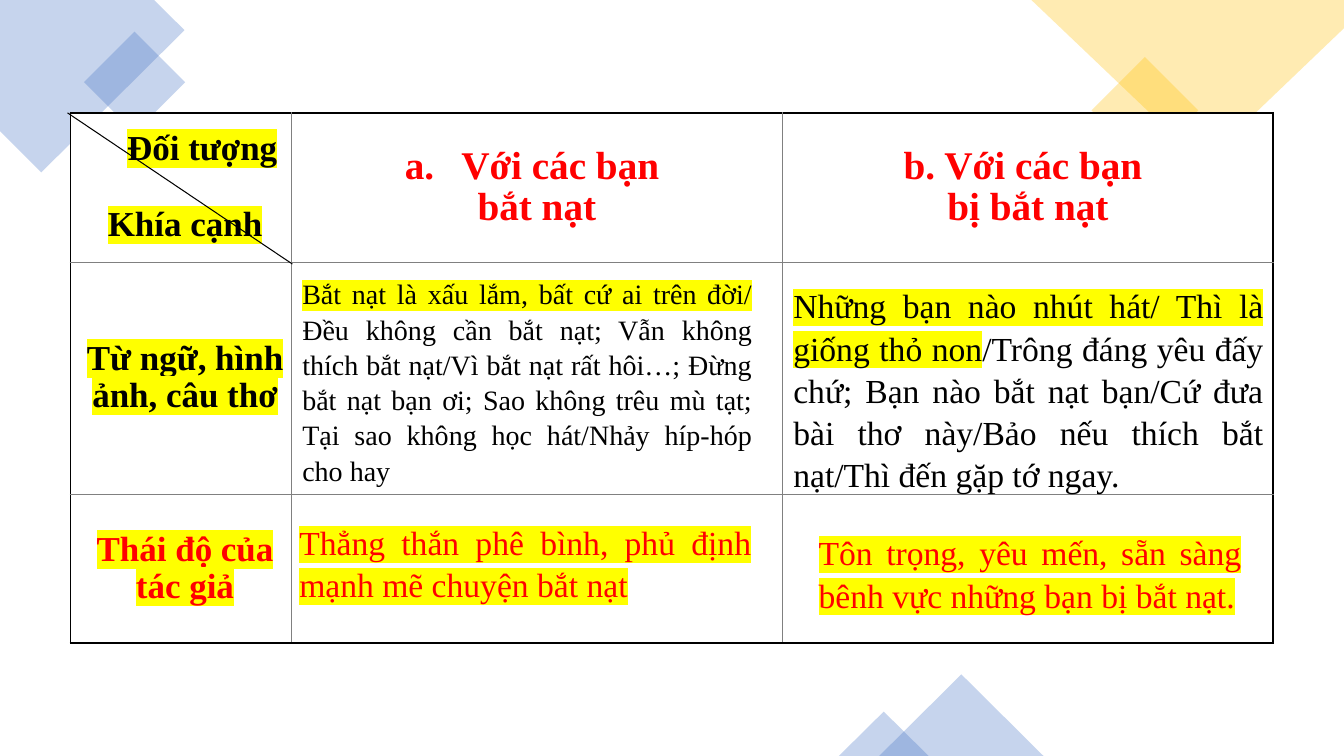
from lxml import etree
from pptx import Presentation
from pptx.dml.color import RGBColor
from pptx.enum.shapes import MSO_CONNECTOR, MSO_SHAPE
from pptx.enum.text import MSO_ANCHOR, PP_ALIGN
from pptx.oxml.ns import qn
from pptx.util import Inches, Pt

CENTER, JUSTIFY = PP_ALIGN.CENTER, PP_ALIGN.JUSTIFY
MIDDLE = MSO_ANCHOR.MIDDLE
SQUARE, TRIANGLE = MSO_SHAPE.RECTANGLE, MSO_SHAPE.ISOSCELES_TRIANGLE
STRAIGHT = MSO_CONNECTOR.STRAIGHT

FONT = "Times New Roman"
BLACK, RED, WHITE, GRAY = "000000", "FF0000", "FFFFFF", "808080"
BLUE, GOLD, YELLOW = "4472C4", "FFC000", "FFFF00"

# Corner decorations: outlines as points, presets as (shape, box, rotation, colour)
OUTLINES = [
    ([(1.53, 0), (0, 0), (0, 1.3), (0.41, 1.71), (1.83, 0.3)], BLUE),
    ([(13.33, 0), (10.23, 0), (11.93, 1.62), (13.33, 0.28)], GOLD),
]
PRESETS = [
    (SQUARE, (0.98, 0.46, 0.71, 0.71), 315, BLUE),
    (SQUARE, (10.98, 0.72, 0.75, 0.75), 315, GOLD),
    (TRIANGLE, (8.72, 6.69, 1.63, 0.81), 0, BLUE),
    (TRIANGLE, (8.32, 7.06, 0.89, 0.44), 0, BLUE),
]

# Table: cell -> paragraphs, size, colour, highlighted
TABLE_BOX = (0.7, 1.12, 11.93, 5.27)
COLUMNS = [2.19, 4.87, 4.87]
ROWS = [1.48, 2.3, 1.48]
CELLS = {
    (0, 0): (["Đối tượng", "Khía cạnh"], 25, BLACK, True),
    (0, 1): (["Với các bạn ", "bắt nạt"], 28, RED, False),
    (0, 2): (["b. Với các bạn ", "bị bắt nạt"], 28, RED, False),
    (1, 0): (["Từ ngữ, hình ảnh, câu thơ"], 25, BLACK, True),
    (2, 0): (["Thái độ của tác giả"], 25, RED, True),
}
LABEL_INSETS = (0.15, 0.12, 0.07, 0.12)
HEADING_INSETS = (0.23, 0, 0.23, 0)
DIAGONAL = (0.67, 1.12, 2.9, 2.62)

# Answers: box, size, colour, highlighted text, plain text
ANSWERS = [
    ((2.9, 2.68, 4.66, 2.12), 20, BLACK,
     "Bắt nạt là xấu lắm, bất cứ ai trên đời/",
     " Đều không cần bắt nạt; Vẫn không thích bắt nạt/Vì bắt nạt rất hôi…; "
     "Đừng bắt nạt bạn ơi; Sao không trêu mù tạt; Tại sao không học "
     "hát/Nhảy híp-hóp cho hay"),
    ((7.77, 2.76, 4.86, 2.12), 24, BLACK,
     "Những bạn nào nhút hát/ Thì là giống thỏ non",
     "/Trông đáng yêu đấy chứ; Bạn nào bắt nạt bạn/Cứ đưa bài thơ này/Bảo "
     "nếu thích bắt nạt/Thì đến gặp tớ ngay."),
    ((2.87, 5.11, 4.68, 1.31), 24, RED,
     "Thẳng thắn phê bình, phủ định mạnh mẽ chuyện bắt nạt", ""),
    ((8.02, 5.21, 4.39, 0.91), 24, RED,
     "Tôn trọng, yêu mến, sẵn sàng bênh vực những bạn bị bắt nạt.", ""),
]


def rgb(value):
    return RGBColor.from_string(value)


def inches(values):
    return [Inches(value) for value in values]


def add_solid(parent, color):
    fill = etree.SubElement(parent, qn("a:solidFill"))
    return etree.SubElement(fill, qn("a:srgbClr"), val=color)


def tint(shape, color):
    shape.shadow.inherit = False
    shape.line.fill.background()
    shape.fill.solid()
    shape.fill.fore_color.rgb = rgb(color)
    shade = shape.fill._xPr.find(".//" + qn("a:srgbClr"))
    etree.SubElement(shade, qn("a:alpha"), val="30000")


def add_span(para, text, highlighted):
    span = para.add_run()
    span.text = text
    if highlighted:
        mark = etree.SubElement(span._r.get_or_add_rPr(), qn("a:highlight"))
        etree.SubElement(mark, qn("a:srgbClr"), val=YELLOW)


def style(para, align, spacing, size, color, bold=False):
    para.alignment = align
    para.line_spacing = spacing
    font = para.font
    font.name, font.size, font.bold = FONT, Pt(size), bold
    font.color.rgb = rgb(color)


def indent(para, left, first=0):
    props = para._p.get_or_add_pPr()
    props.set("marL", str(Inches(left)))
    props.set("indent", str(Inches(first)))
    return props


def draw_borders(cell, row, col):
    outer = {"L": col == 0, "R": col == len(COLUMNS) - 1,
             "T": row == 0, "B": row == len(ROWS) - 1}
    props = cell._tc.get_or_add_tcPr()
    for side, is_outer in outer.items():
        width, color = (1.5, BLACK) if is_outer else (0.5, GRAY)
        border = etree.SubElement(props, qn("a:ln" + side), w=str(Pt(width)))
        add_solid(border, color)


def fill_cell(cell, row, col):
    draw_borders(cell, row, col)
    cell.fill.solid()
    cell.fill.fore_color.rgb = rgb(WHITE)
    if (row, col) not in CELLS:
        return
    lines, size, color, highlighted = CELLS[row, col]
    cell.vertical_anchor = MIDDLE
    insets = HEADING_INSETS if col else LABEL_INSETS
    (cell.margin_left, cell.margin_top,
     cell.margin_right, cell.margin_bottom) = inches(insets)
    frame = cell.text_frame
    for number, line in enumerate(lines):
        para = frame.add_paragraph() if number else frame.paragraphs[0]
        add_span(para, line, highlighted)
        if (row, col, number) == (0, 0, 0):
            indent(para, 0.34)
        elif (row, col, number) == (0, 0, 1):
            para.space_before = Pt(28)
        elif (row, col, number) == (0, 1, 0):
            props = indent(para, 0.56, -0.56)
            etree.SubElement(props, qn("a:buAutoNum"), type="alphaLcPeriod")
        style(para, CENTER, 0.96, size, color, bold=True)


def main():
    deck = Presentation()
    deck.slide_width, deck.slide_height = Inches(13.33), Inches(7.5)
    page = deck.slides.add_slide(deck.slide_layouts[6])
    shapes = page.shapes

    # Decorations
    for points, color in OUTLINES:
        start, *rest = [inches(point) for point in points]
        builder = shapes.build_freeform(*start)
        builder.add_line_segments(rest, close=True)
        tint(builder.convert_to_shape(), color)
    for kind, box, rotation, color in PRESETS:
        preset = shapes.add_shape(kind, *inches(box))
        preset.rotation = rotation
        tint(preset, color)

    # Comparison table
    table = shapes.add_table(len(ROWS), len(COLUMNS), *inches(TABLE_BOX)).table
    table.first_row = table.horz_banding = False
    for column, width in zip(table.columns, COLUMNS):
        column.width = Inches(width)
    for line, height in zip(table.rows, ROWS):
        line.height = Inches(height)
    for row in range(len(ROWS)):
        for col in range(len(COLUMNS)):
            fill_cell(table.cell(row, col), row, col)

    # Diagonal of the corner cell
    diagonal = shapes.add_connector(STRAIGHT, *inches(DIAGONAL))
    diagonal.line.color.rgb = rgb(BLACK)
    diagonal.line.width = Pt(0.75)
    etree.SubElement(diagonal._element.spPr, qn("a:effectLst"))

    # Answers over the table
    for box, size, color, marked, plain in ANSWERS:
        frame = shapes.add_textbox(*inches(box)).text_frame
        frame.word_wrap = True
        para = frame.paragraphs[0]
        add_span(para, marked, True)
        if plain:
            add_span(para, plain, False)
        style(para, JUSTIFY, 1.05, size, color)

    deck.save("out.pptx")


if __name__ == "__main__":
    main()
